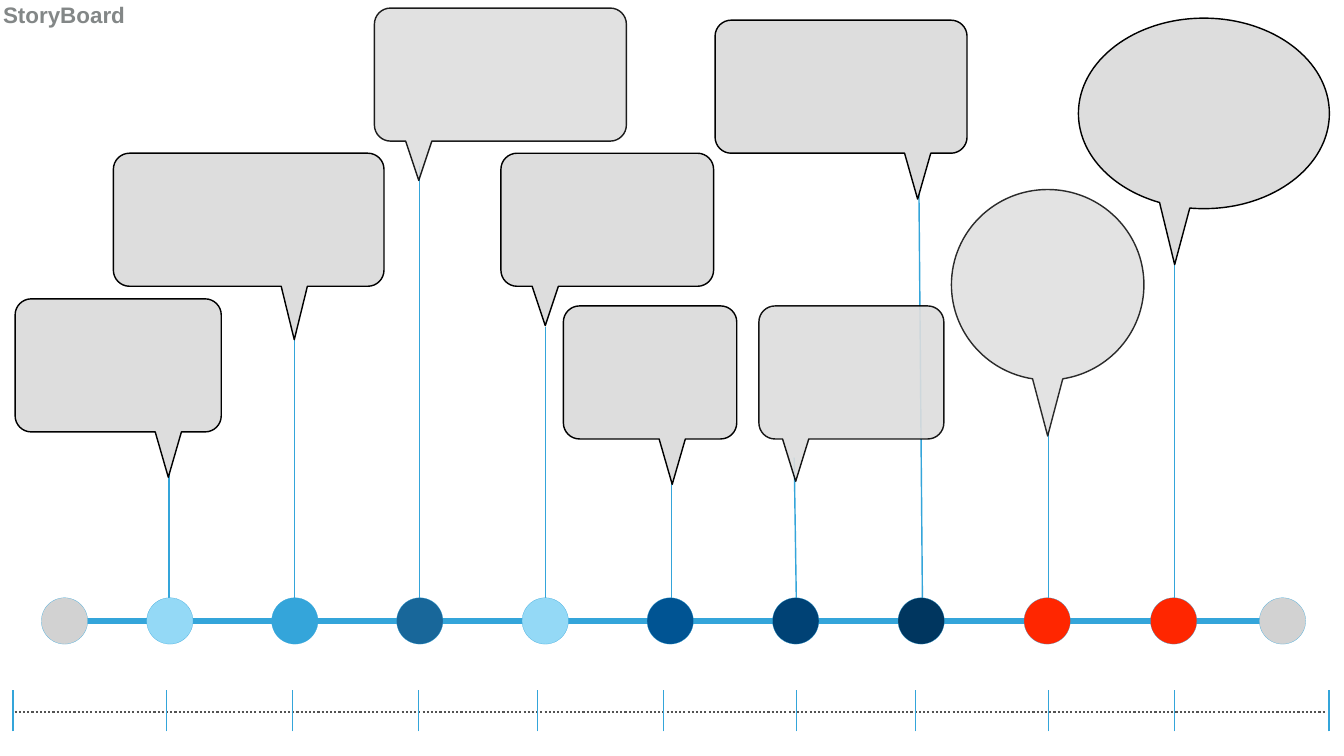
"""Build a storyboard timeline slide with callouts above a row of milestones."""
from dataclasses import dataclass
from itertools import pairwise
from math import acos, cos, pi, sin, tan

from lxml import etree
from pptx import Presentation
from pptx.dml.color import RGBColor
from pptx.enum.dml import MSO_LINE
from pptx.enum.shapes import MSO_CONNECTOR, MSO_SHAPE
from pptx.enum.text import MSO_ANCHOR, MSO_AUTO_SIZE, PP_ALIGN
from pptx.oxml.ns import qn
from pptx.util import Inches, Pt

STRAIGHT, OVAL, DOTTED = MSO_CONNECTOR.STRAIGHT, MSO_SHAPE.OVAL, MSO_LINE.ROUND_DOT
MIDDLE, LEFT, NO_FIT = MSO_ANCHOR.MIDDLE, PP_ALIGN.LEFT, MSO_AUTO_SIZE.NONE
COLORS = {
    "title": "838787", "axis": "34A5DA", "ruler": "535353", "callout": "DDDDDD",
    "outline": "000000", "end": "D2D2D2", "pale": "94D9F6", "sky": "34A5DA",
    "steel": "18679A", "blue": "005493", "navy": "004275", "midnight": "00365F",
    "red": "FF2600",
}
NODE_SIZE, AXIS_Y = 0.92, 12.32
END_NODES = (1.28, 25.45)
RULER_Y, TICK_TOP, TICK_BOTTOM = 14.13, 13.7, 14.51
RULER_ENDS = (0.26, 26.37)
TICKS = (3.31, 5.81, 8.31, 10.67, 13.17, 15.81, 18.17, 20.81, 23.31)
CORNER, BOX_HEIGHT, OVAL_HEIGHT = 0.32, 2.64, 3.78
BOX_TAIL, OVAL_TAIL = 0.26, 0.3

Point = tuple[float, float]
Segment = list[Point]


@dataclass(frozen=True)
class Milestone:
    """A node on the axis with its stem and callout."""
    node_color: str
    node_x: float
    stem_start: Point
    stem_end: Point
    left: float
    top: float
    width: float
    tip: Point
    opacity: int = 100
    is_round: bool = False


MILESTONES = (
    Milestone("pale", 3.37, (3.35, 12.15), (3.35, 8.88), 0.3, 5.93, 4.09, (3.34, 9.47)),
    Milestone("sky", 5.85, (5.84, 12.28), (5.84, 6.66), 2.25, 3.04, 5.37, (5.84, 6.74)),
    Milestone("steel", 8.33, (8.33, 12.42), (8.33, 3.29), 7.43, 0.16, 5, (8.31, 3.58), 88),
    Milestone("pale", 10.82, (10.83, 12.56), (10.83, 6.48), 9.94, 3.04, 4.22, (10.82, 6.46)),
    Milestone("blue", 13.3, (13.33, 12.28), (13.33, 9.22), 11.18, 6.07, 3.44, (13.34, 9.61)),
    Milestone("navy", 15.79, (15.81, 12.42), (15.76, 9.08), 15.06, 6.07, 3.67, (15.79, 9.55), 91),
    Milestone("midnight", 18.28, (18.31, 12.56), (18.23, 3.15), 14.19, 0.4, 5, (18.21, 3.95)),
    Milestone("red", 20.78, (20.81, 12.28), (20.81, 8.57), 18.88, 3.76, 3.82, (20.79, 8.65), 82, True),
    Milestone("red", 23.29, (23.31, 12.42), (23.31, 4.98), 21.4, 0.36, 4.98, (23.31, 5.25), is_round=True),
)


def rgb(color: str) -> RGBColor:
    """Look up a named colour."""
    return RGBColor.from_string(COLORS[color])


def arc(center: Point, radii: Point, start: float, end: float) -> Segment:
    """Return the two controls and the end point of an elliptical arc."""
    k = 4 / 3 * tan((end - start) / 4)
    units = ((cos(start) - k * sin(start), sin(start) + k * cos(start)),
             (cos(end) + k * sin(end), sin(end) - k * cos(end)),
             (cos(end), sin(end)))
    return [(center[0] + radii[0] * x, center[1] + radii[1] * y) for x, y in units]


def rounded_outline(item: Milestone) -> list[Segment]:
    """Trace a rounded rectangle with a tail on its lower edge."""
    right, bottom = item.left + item.width, item.top + BOX_HEIGHT
    x1, x2 = item.left + CORNER, right - CORNER
    y1, y2 = item.top + CORNER, bottom - CORNER
    top_left, bottom_left, bottom_right, top_right = (
        arc(center, (CORNER, CORNER), -quarter * pi / 2, -(quarter + 1) * pi / 2)
        for quarter, center in enumerate(((x1, y1), (x1, y2), (x2, y2), (x2, y1)), start=1))
    return [[(x1, item.top)], top_left, [(item.left, y2)], bottom_left,
            [(item.tip[0] - BOX_TAIL, bottom)], [item.tip], [(item.tip[0] + BOX_TAIL, bottom)],
            [(x2, bottom)], bottom_right, [(right, y1)], top_right]


def oval_outline(item: Milestone) -> list[Segment]:
    """Trace an ellipse with a tail on its lower edge."""
    radii = (item.width / 2, OVAL_HEIGHT / 2)
    center = (item.left + radii[0], item.top + radii[1])
    tail_left, tail_right = (
        acos((item.tip[0] + side - center[0]) / radii[0]) for side in (-OVAL_TAIL, OVAL_TAIL))
    base_right = arc(center, radii, tail_right, tail_right)[-1:]
    stops = [tail_right] + [pi / 2] * (tail_right > pi / 2) + [0, -pi / 2]
    before = [arc(center, radii, a, b) for a, b in pairwise((3 * pi / 2, pi, tail_left))]
    after = [arc(center, radii, a, b) for a, b in pairwise(stops)]
    return [[(center[0], item.top)], *before, [item.tip], base_right, *after]


def add_line(shapes, start: Point, end: Point, color: str, width: float):
    """Draw a straight line without a shadow."""
    connector = shapes.add_connector(STRAIGHT, *map(Inches, (*start, *end)))
    connector.line.color.rgb = rgb(color)
    connector.line.width = Pt(width)
    etree.SubElement(connector.element.spPr, qn("a:effectLst"))
    return connector


def paint(shape, fill: str, line: str, width: float) -> None:
    """Give a shape a flat fill and outline."""
    shape.shadow.inherit = False
    shape.fill.solid()
    shape.fill.fore_color.rgb = rgb(fill)
    shape.line.color.rgb = rgb(line)
    shape.line.width = Pt(width)


def add_node(shapes, center_x: float, color: str) -> None:
    """Draw one circle on the axis."""
    corner = (center_x - NODE_SIZE / 2, AXIS_Y - NODE_SIZE / 2)
    node = shapes.add_shape(OVAL, *map(Inches, (*corner, NODE_SIZE, NODE_SIZE)))
    paint(node, color, "axis", 0.25)


def add_callout(shapes, item: Milestone) -> None:
    """Draw one speech bubble, joining control points into curves."""
    start, *segments = oval_outline(item) if item.is_round else rounded_outline(item)
    builder = shapes.build_freeform(*map(Inches, start[0]))
    builder.add_line_segments(
        [(Inches(x), Inches(y)) for segment in segments for x, y in segment], close=True)
    bubble = builder.convert_to_shape()
    steps = iter(list(bubble.element.spPr.iter(qn("a:lnTo"))))
    for segment in segments:
        first, *others = [next(steps) for _ in segment]
        if others:
            first.tag = qn("a:cubicBezTo")
            for step in others:
                first.append(step[0])
                step.getparent().remove(step)
    paint(bubble, "callout", "outline", 2)
    if item.opacity < 100:
        for color in list(bubble.element.spPr.iter(qn("a:srgbClr"))):
            etree.SubElement(color, qn("a:alpha"), val=str(item.opacity * 1000))


def add_title(slide) -> None:
    """Fill and format the title placeholder."""
    title = slide.shapes.title
    title.left, title.top, title.width, title.height = map(Inches, (0, -0.03, 2.55, 0.64))
    frame = title.text_frame
    frame.text = "StoryBoard"
    frame.auto_size, frame.word_wrap, frame.vertical_anchor = NO_FIT, False, MIDDLE
    frame.margin_left = frame.margin_right = Inches(0.06)
    frame.margin_top = frame.margin_bottom = Inches(0.06)
    paragraph = frame.paragraphs[0]
    paragraph.alignment = LEFT
    font = paragraph.runs[0].font
    font.name, font.size, font.bold = "Arial", Pt(32), True
    font.color.rgb = rgb("title")


def main() -> None:
    """Build and save the slide."""
    deck = Presentation()
    deck.slide_width, deck.slide_height = Inches(26.67), Inches(15)
    slide = deck.slides.add_slide(deck.slide_layouts[5])
    shapes = slide.shapes
    add_title(slide)

    for item in MILESTONES:
        add_line(shapes, item.stem_start, item.stem_end, "axis", 2)
    add_line(shapes, (1.57, AXIS_Y), (25.09, AXIS_Y), "axis", 8)
    for item in MILESTONES:
        add_node(shapes, item.node_x, item.node_color)
    for item in MILESTONES:
        add_callout(shapes, item)
    for x in END_NODES:
        add_node(shapes, x, "end")

    ruler = add_line(shapes, (0.29, RULER_Y), (26.33, RULER_Y), "ruler", 3)
    ruler.line.dash_style = DOTTED
    for positions, width in ((TICKS, 1), (RULER_ENDS, 2)):
        for x in positions:
            add_line(shapes, (x, TICK_BOTTOM), (x, TICK_TOP), "axis", width)
    deck.save("out.pptx")


if __name__ == "__main__":
    main()
